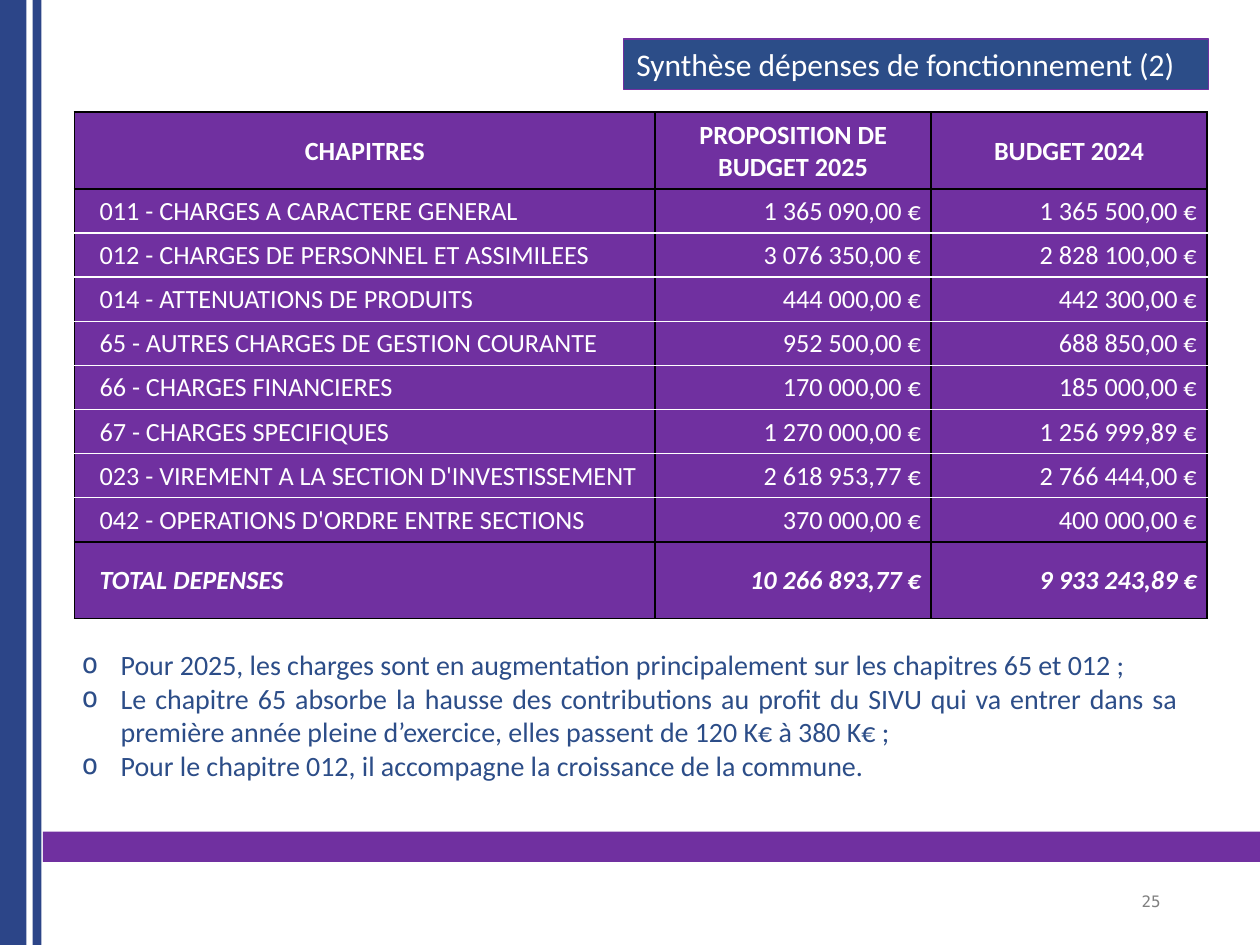
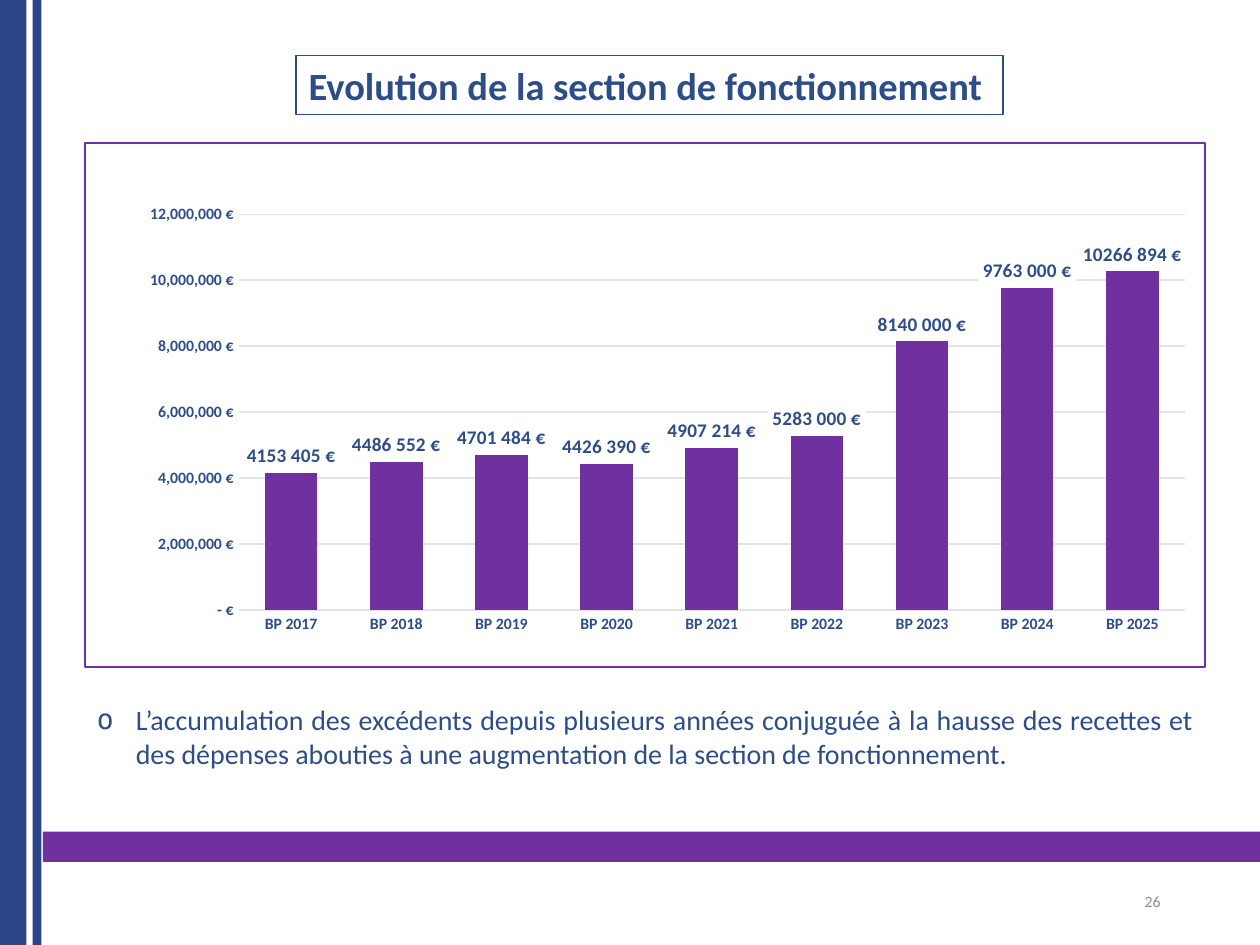
"""Build two municipal budget slides: spending by chapter and yearly evolution."""
from lxml.etree import SubElement
from pptx import Presentation
from pptx.chart.data import CategoryChartData
from pptx.dml.color import RGBColor
from pptx.enum.chart import XL_CHART_TYPE, XL_LABEL_POSITION, XL_TICK_MARK
from pptx.enum.shapes import MSO_SHAPE
from pptx.enum.text import MSO_ANCHOR, MSO_AUTO_SIZE, PP_ALIGN
from pptx.oxml import parse_xml
from pptx.oxml.ns import nsdecls, qn
from pptx.util import Inches, Pt

W, H = 10, 7.5
FONT, MONO = "Calibri", "DejaVu Sans Mono"
PURPLE, NAVY, BAND = "7030A0", "2C4D88", "2C4588"
WHITE, BLACK, GRID = "FFFFFF", "000000", "E0E5EB"
BANDS = [(0.34, 6.6, W - 0.34, 0.24, PURPLE), (0, 0, 0.21, H, BAND), (0.26, 0, 0.07, H, BAND)]

HEADER = ["CHAPITRES", "PROPOSITION DE BUDGET 2025", "BUDGET 2024"]
CHAPTERS = [
    ("011 - CHARGES A CARACTERE GENERAL", "1 365 090,00 €", "1 365 500,00 €"),
    ("012 - CHARGES DE PERSONNEL ET ASSIMILEES", "3 076 350,00 €", "2 828 100,00 €"),
    ("014 - ATTENUATIONS DE PRODUITS", "444 000,00 €", "442 300,00 €"),
    ("65 - AUTRES CHARGES DE GESTION COURANTE", "952 500,00 €", "688 850,00 €"),
    ("66 - CHARGES FINANCIERES", "170 000,00 €", "185 000,00 €"),
    ("67 - CHARGES SPECIFIQUES", "1 270 000,00 €", "1 256 999,89 €"),
    ("023 - VIREMENT A LA SECTION D'INVESTISSEMENT", "2 618 953,77 €", "2 766 444,00 €"),
    ("042 - OPERATIONS D'ORDRE ENTRE SECTIONS", "370 000,00 €", "400 000,00 €"),
]
TOTAL = ("TOTAL DEPENSES", "10 266 893,77 €", "9 933 243,89 €")
COL_WIDTHS = [4.61, 2.19, 2.19]
CHAPTER_NOTES = [
    "Pour 2025, les charges sont en augmentation principalement sur les chapitres 65 et 012 ;",
    "Le chapitre 65 absorbe la hausse des contributions au profit du SIVU qui va entrer dans sa "
    "première année pleine d’exercice, elles passent de 120 K€ à 380 K€ ;",
    "Pour le chapitre 012, il accompagne la croissance de la commune.",
]
FIRST_YEAR = 2017
BUDGETS = [4153405, 4486552, 4701484, 4426390, 4907214, 5283000, 8140000, 9763000, 10266894]
EVOLUTION_NOTES = [
    "L’accumulation des excédents depuis plusieurs années conjuguée à la hausse des recettes et "
    "des dépenses abouties à une augmentation de la section de fonctionnement.",
]


def rgb(color):
    return RGBColor.from_string(color)


def box(*lengths):
    return [Inches(v) for v in lengths]


def style_font(font, size, color, bold=False, italic=False, name=FONT):
    font.name, font.size, font.bold, font.italic = name, Pt(size), bold, italic
    font.color.rgb = rgb(color)


def write(tf, text, align=PP_ALIGN.LEFT, bullet=False, after=0, anchor=None, **fmt):
    """Fill a text frame, one paragraph per line."""
    tf.word_wrap = True
    if anchor is not None:
        tf.vertical_anchor = anchor
    for i, line in enumerate([text] if isinstance(text, str) else text):
        p = tf.paragraphs[0] if i == 0 else tf.add_paragraph()
        if bullet:
            pPr = p._p.get_or_add_pPr()
            pPr.set("marL", str(Inches(0.31)))
            pPr.set("indent", str(-Inches(0.31)))
            SubElement(pPr, qn("a:buFont"), typeface=MONO)
            SubElement(pPr, qn("a:buChar"), char="o")
        p.alignment, p.space_after = align, Pt(after)
        r = p.add_run()
        r.text = line
        style_font(r.font, **fmt)


def add_base(prs, number, number_font, number_color):
    s = prs.slides.add_slide(prs.slide_layouts[5])
    for *place, color in BANDS:
        sp = s.shapes.add_shape(MSO_SHAPE.RECTANGLE, *box(*place))
        sp.shadow.inherit = False
        sp.fill.solid()
        sp.fill.fore_color.rgb = rgb(color)
        sp.line.fill.background()
    tb = s.shapes.add_textbox(*box(7.06, 6.95, 2.25, 0.4))
    write(tb.text_frame, number, PP_ALIGN.RIGHT, anchor=MSO_ANCHOR.MIDDLE,
          size=9, color=number_color, name=number_font)
    return s


def add_title(s, text, place, line, fill=None, **fmt):
    sp = s.shapes.title
    sp.left, sp.top, sp.width, sp.height = box(*place)
    if fill:
        sp.fill.solid()
        sp.fill.fore_color.rgb = rgb(fill)
    sp.line.color.rgb, sp.line.width = rgb(line), Pt(0.75)
    sp.text_frame.auto_size = MSO_AUTO_SIZE.NONE
    write(sp.text_frame, text, anchor=MSO_ANCHOR.MIDDLE, **fmt)


def add_notes(s, lines, place, after=0):
    tb = s.shapes.add_textbox(*box(*place))
    write(tb.text_frame, lines, PP_ALIGN.JUSTIFY, bullet=True, after=after, size=16, color=NAVY)


def style_cell(cell, top, bottom):
    tcPr = cell._tc.get_or_add_tcPr()
    for side, color in zip("LRTB", (BLACK, BLACK, top, bottom)):
        ln = SubElement(tcPr, qn(f"a:ln{side}"), w=str(Pt(1)))
        SubElement(SubElement(ln, qn("a:solidFill")), qn("a:srgbClr"), val=color)
    cell.fill.solid()
    cell.fill.fore_color.rgb = rgb(PURPLE)
    cell.vertical_anchor = MSO_ANCHOR.MIDDLE


def add_budget_table(s):
    rows = [HEADER, *CHAPTERS, TOTAL]
    last = len(rows) - 1
    heights = [0.61 if i in (0, last) else 0.35 for i in range(len(rows))]
    table = s.shapes.add_table(len(rows), len(HEADER),
                               *box(0.59, 0.89, sum(COL_WIDTHS), sum(heights))).table
    table.first_row = table.horz_banding = False
    for col, width in zip(table.columns, COL_WIDTHS):
        col.width = Inches(width)
    for i, values in enumerate(rows):
        table.rows[i].height = Inches(heights[i])
        top = BLACK if i in (0, 1, last) else WHITE
        bottom = BLACK if i in (0, last - 1, last) else WHITE
        for j, value in enumerate(values):
            cell = table.cell(i, j)
            style_cell(cell, top, bottom)
            cell.margin_left = Inches(0.2 if i and j == 0 else 0.01)
            cell.margin_right = Inches(0.08 if i and j else 0.01)
            cell.margin_top, cell.margin_bottom = Inches(0.01), 0
            align = PP_ALIGN.CENTER if i == 0 else PP_ALIGN.RIGHT if j else PP_ALIGN.LEFT
            write(cell.text_frame, value, align, size=15, color=WHITE,
                  bold=i in (0, last), italic=i == last)


def add_budget_chart(s):
    data = CategoryChartData()
    data.categories = [f"BP {FIRST_YEAR + i}" for i in range(len(BUDGETS))]
    data.add_series("Series 1", BUDGETS)
    chart = s.shapes.add_chart(XL_CHART_TYPE.COLUMN_CLUSTERED,
                               *box(0.67, 1.13, 8.9, 4.17), data).chart
    chart.has_title = chart.has_legend = False
    style_font(chart.font, 10, BLACK)

    plot = chart.plots[0]
    plot.gap_width, plot.overlap, plot.vary_by_categories = 100, -24, False
    fill = plot.series[0].format.fill
    fill.solid()
    fill.fore_color.rgb = rgb(PURPLE)
    plot.has_data_labels = True
    labels = plot.data_labels
    labels.show_value, labels.position = True, XL_LABEL_POSITION.OUTSIDE_END
    labels.number_format, labels.number_format_is_linked = r"_-#\ ##0\ [$€-40C]_-", False
    style_font(labels.font, 11, NAVY, bold=True)
    solid = '<a:solidFill><a:srgbClr val="{}"/></a:solidFill>'
    labels._element.find(qn("c:numFmt")).addnext(parse_xml(
        f'<c:spPr {nsdecls("c", "a")}>{solid.format(WHITE)}</c:spPr>'))

    cat, val = chart.category_axis, chart.value_axis
    for axis in (cat, val):
        axis.major_tick_mark = axis.minor_tick_mark = XL_TICK_MARK.NONE
        style_font(axis.tick_labels.font, 9, NAVY, bold=True)
    val.minimum_scale, val.maximum_scale, val.major_unit = 0, 12000000, 2000000
    val.tick_labels.number_format = r'#,##0\ [$€-40C];\-#,##0\ [$€-40C];"- €"'
    val.tick_labels.number_format_is_linked = False
    val.format.line.fill.background()
    for line in (cat.format.line, val.major_gridlines.format.line):
        line.color.rgb, line.width = rgb(GRID), Pt(0.75)

    area = chart._chartSpace.find(qn("c:chart"))
    area.addnext(parse_xml(
        f'<c:spPr {nsdecls("c", "a")}><a:noFill/>'
        f'<a:ln w="{Pt(0.75)}">{solid.format(PURPLE)}</a:ln></c:spPr>'))
    plot_area = area.find(qn("c:plotArea"))
    layout = plot_area.find(qn("c:layout"))
    if layout is not None:
        plot_area.remove(layout)
    parts = [("layoutTarget", "inner"), ("xMode", "edge"), ("yMode", "edge"),
             ("x", 0.137), ("y", 0.136), ("w", 0.845), ("h", 0.755)]
    manual = "".join(f'<c:{tag} val="{value}"/>' for tag, value in parts)
    plot_area.insert(0, parse_xml(
        f'<c:layout {nsdecls("c")}><c:manualLayout>{manual}</c:manualLayout></c:layout>'))


def main():
    prs = Presentation()
    prs.slide_width, prs.slide_height = box(W, H)

    s = add_base(prs, "25", MONO, "808080")
    add_title(s, "Synthèse dépenses de fonctionnement (2)", (4.95, 0.31, 4.64, 0.4),
              PURPLE, fill=NAVY, size=18, color=WHITE)
    add_budget_table(s)
    add_notes(s, CHAPTER_NOTES, (0.55, 5.09, 8.9, 1.21))

    s = add_base(prs, "26", FONT, "8C8C8C")
    add_title(s, "Evolution de la section de fonctionnement", (2.35, 0.44, 5.61, 0.47),
              NAVY, size=22, color=NAVY, bold=True)
    add_budget_chart(s)
    add_notes(s, EVOLUTION_NOTES, (0.67, 5.53, 8.9, 0.64), after=6)

    prs.save("out.pptx")


if __name__ == "__main__":
    main()
